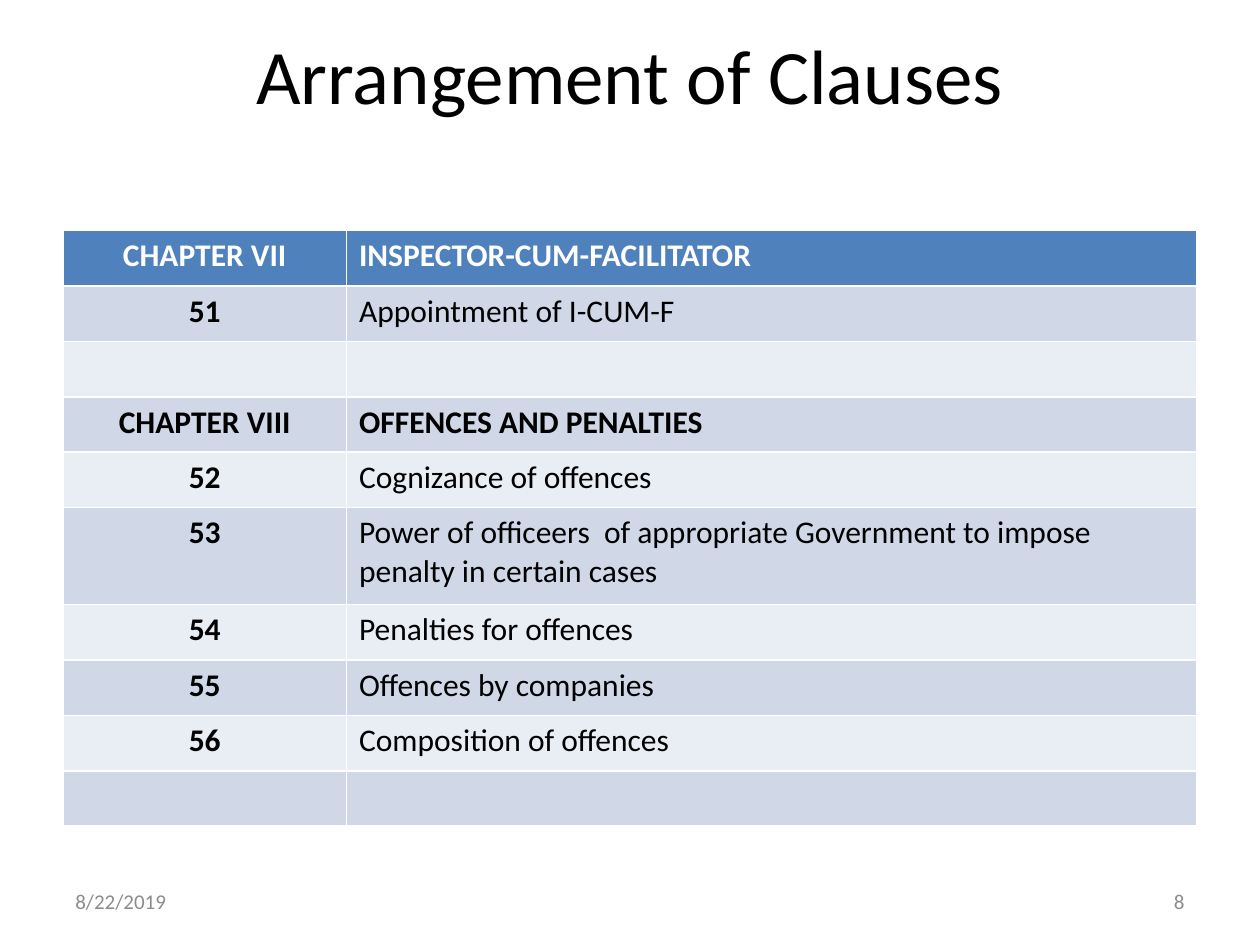
from pptx import Presentation
from pptx.dml.color import RGBColor
from pptx.enum.text import MSO_ANCHOR, PP_ALIGN
from pptx.util import Inches, Pt

LEFT, CENTER, RIGHT = PP_ALIGN.LEFT, PP_ALIGN.CENTER, PP_ALIGN.RIGHT
MIDDLE = MSO_ANCHOR.MIDDLE

FONT = "Calibri"
BLACK, WHITE, GRAY = "000000", "FFFFFF", "8C8C8C"
HEADER_FILL = "4F81BD"
BAND_FILLS = ["D0D8E8", "E9EDF4"]

TITLE = "Arrangement of Clauses"
DATE = "8/22/2019"
PAGE = "8"
CLAUSES = [
    ("CHAPTER VII", "INSPECTOR-CUM-FACILITATOR"),
    ("51", "Appointment of I-CUM-F"),
    ("", ""),
    ("CHAPTER VIII", "OFFENCES AND PENALTIES"),
    ("52", "Cognizance of offences"),
    ("53", "Power of officeers  of appropriate Government to impose penalty in certain cases"),
    ("54", "Penalties for offences"),
    ("55", "Offences by companies"),
    ("56", "Composition of offences"),
    ("", ""),
]
COL_WIDTHS = [2.25, 6.75]
ROW_HEIGHT, TALL_ROW_HEIGHT = 0.44, 0.77
TALL_ROW = 5


def rgb(color):
    return RGBColor.from_string(color)


def write(tf, text, size=18, color=BLACK, bold=False, align=LEFT):
    p = tf.paragraphs[0]
    p.alignment = align
    p.font.size = Pt(size)
    if text:
        r = p.add_run()
        r.text = text
        r.font.name = FONT
        r.font.size = Pt(size)
        r.font.bold = bold
        r.font.color.rgb = rgb(color)


def add_text(slide, text, x, y, w, h, **fmt):
    tf = slide.shapes.add_textbox(Inches(x), Inches(y), Inches(w), Inches(h)).text_frame
    tf.word_wrap = True
    tf.vertical_anchor = MIDDLE
    write(tf, text, **fmt)


def add_clauses(slide, x, y):
    heights = [TALL_ROW_HEIGHT if i == TALL_ROW else ROW_HEIGHT for i in range(len(CLAUSES))]
    table = slide.shapes.add_table(
        len(CLAUSES), len(COL_WIDTHS), Inches(x), Inches(y),
        Inches(sum(COL_WIDTHS)), Inches(sum(heights))).table
    for col, width in zip(table.columns, COL_WIDTHS):
        col.width = Inches(width)
    for i, (clause, height) in enumerate(zip(CLAUSES, heights)):
        table.rows[i].height = Inches(height)
        is_chapter = clause[0].startswith("CHAPTER")
        for j, text in enumerate(clause):
            cell = table.cell(i, j)
            cell.fill.solid()
            cell.fill.fore_color.rgb = rgb(BAND_FILLS[(i - 1) % 2] if i else HEADER_FILL)
            write(cell.text_frame, text, color=BLACK if i else WHITE,
                  bold=is_chapter or j == 0, align=LEFT if j else CENTER)


def main():
    prs = Presentation()
    prs.slide_width, prs.slide_height = Inches(10), Inches(7.5)
    slide = prs.slides.add_slide(prs.slide_layouts[6])
    add_text(slide, TITLE, 0.5, 0.17, 9, 0.83, size=44, align=CENTER)
    add_clauses(slide, 0.5, 1.83)
    add_text(slide, DATE, 0.5, 6.95, 2.33, 0.4, size=12, color=GRAY)
    add_text(slide, PAGE, 7.17, 6.95, 2.33, 0.4, size=12, color=GRAY, align=RIGHT)
    prs.save("out.pptx")


if __name__ == "__main__":
    main()
